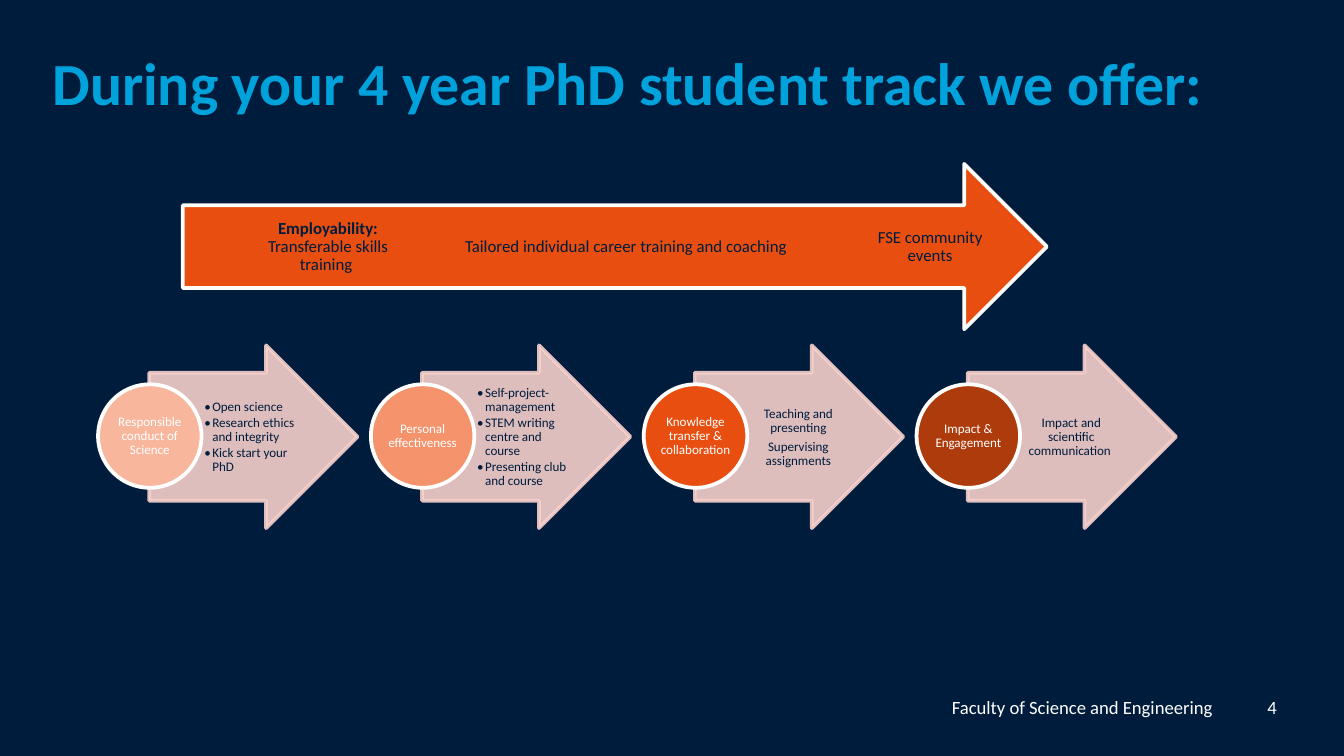
from lxml.etree import SubElement
from pptx import Presentation
from pptx.dml.color import RGBColor
from pptx.enum.shapes import MSO_SHAPE
from pptx.enum.text import MSO_ANCHOR, MSO_AUTO_SIZE, PP_ALIGN
from pptx.oxml.ns import qn
from pptx.util import Inches, Pt

COLORS = {"navy": "001C3D", "blue": "00A2DB", "white": "FFFFFF",
          "orange": "E84E10", "pink": "F6D0CC", "peach": "F8B79D",
          "coral": "F5936C", "rust": "AE3B0C"}
TITLE = "During your 4 year PhD student track we offer:"
FOOTER = [("Faculty of Science and Engineering", 4.67, 4.35), ("4", 9.09, 0.41)]
# Paragraphs are lists of (text, bold) runs or plain strings
TRACK = [
    ([[("Employability: ", True), ("Transferable skills training ", False)]], 1.88, 1.12),
    (["Tailored individual career training and coaching "], 3.21, 2.92),
    (["FSE community events"], 6.36, 1.12),
]
# Circle label, circle colour, details, bulleted
STEPS = [
    ("Responsible conduct of Science", "peach",
     ["Open science", "Research ethics and integrity", "Kick start your PhD"], True),
    ("Personal effectiveness", "coral",
     ["Self-project-management", "STEM writing centre and course",
      "Presenting club and course"], True),
    ("Knowledge transfer & collaboration", "orange",
     ["Teaching and presenting", "Supervising assignments"], False),
    ("Impact & Engagement", "rust",
     ["Impact and scientific communication "], False),
]
LEFT, PITCH = 0.73, 2.03


def rgb(name):
    return RGBColor.from_string(COLORS[name])


def write(shape, paras, size=7, color="navy", bold=False, align=PP_ALIGN.CENTER,
          anchor=MSO_ANCHOR.MIDDLE, inset=(0, 0, 0, 0), line=0.9, after=0,
          bullet=False):
    frame = shape.text_frame
    frame.word_wrap = True
    frame.auto_size = MSO_AUTO_SIZE.NONE
    frame.vertical_anchor = anchor
    (frame.margin_left, frame.margin_top,
     frame.margin_right, frame.margin_bottom) = map(Inches, inset)
    for i, runs in enumerate(paras):
        para = frame.paragraphs[0] if i == 0 else frame.add_paragraph()
        para.alignment = align
        para.line_spacing = line
        para.space_after = Pt(after)
        if bullet:
            props = para._p.get_or_add_pPr()
            props.set("marL", str(Inches(0.06)))
            props.set("indent", str(Inches(-0.06)))
            SubElement(props, qn("a:buFont"), typeface="Calibri")
            SubElement(props, qn("a:buChar"), char="•")
        for text, heavy in [(runs, bold)] if isinstance(runs, str) else runs:
            run = para.add_run()
            run.text = text
            font = run.font
            font.name, font.size, font.bold = "Calibri", Pt(size), heavy
            font.color.rgb = rgb(color)


def add_text(slide, box, paras, **style):
    write(slide.shapes.add_textbox(*map(Inches, box)), paras, **style)


def add_shape(slide, kind, box, fill, line, alpha=None):
    """Add a filled, outlined shape; alpha is its opacity in percent."""
    shape = slide.shapes.add_shape(kind, *map(Inches, box))
    shape.shadow.inherit = False
    shape.fill.solid()
    shape.fill.fore_color.rgb = rgb(fill)
    shape.line.color.rgb = rgb(line)
    shape.line.width = Pt(2)
    if alpha:
        for node in shape._element.spPr.iter(qn("a:srgbClr")):
            SubElement(node, qn("a:alpha"), val=str(alpha * 1000))
    return shape


def main():
    deck = Presentation()
    deck.slide_width = Inches(10)
    deck.slide_height = deck.slide_width * 9 // 16
    slide = deck.slides.add_slide(deck.slide_layouts[5])
    slide.background.fill.solid()
    slide.background.fill.fore_color.rgb = rgb("navy")

    title = slide.shapes.title
    title.left, title.top, title.width, title.height = map(
        Inches, (0.39, 0.34, 9.11, 0.62))
    write(title, [TITLE], size=32, color="blue", bold=True,
          align=PP_ALIGN.LEFT, anchor=MSO_ANCHOR.TOP, line=1.0)

    for text, x, width in FOOTER:
        add_text(slide, (x, 5.18, width, 0.3), [text], size=10, color="white",
                 align=PP_ALIGN.RIGHT, anchor=MSO_ANCHOR.TOP, line=1.0)

    for i, (label, color, details, bullet) in enumerate(STEPS):
        x = LEFT + i * PITCH
        arrow = add_shape(slide, MSO_SHAPE.RIGHT_ARROW, (x + 0.38, 2.57, 1.55, 1.36),
                          "pink", "pink", alpha=90)
        arrow.adjustments[0] = 0.7
        add_text(slide, (x + 0.77, 2.78, 0.75, 0.95), details, bullet=bullet,
                 align=PP_ALIGN.LEFT if bullet else PP_ALIGN.CENTER,
                 after=1 if bullet else 2.5, inset=(0.02, 0, 0.01, 0))
        circle = add_shape(slide, MSO_SHAPE.OVAL, (x, 2.86, 0.77, 0.77), color, "white")
        write(circle, [label], color="white")

    add_shape(slide, MSO_SHAPE.RIGHT_ARROW, (1.36, 1.22, 6.43, 1.23), "orange", "white")
    for paras, x, width in TRACK:
        add_text(slide, (x, 1.53, width, 0.62), paras, size=9, after=3,
                 inset=(0, 0.1, 0, 0.1))

    deck.save("out.pptx")


if __name__ == "__main__":
    main()
